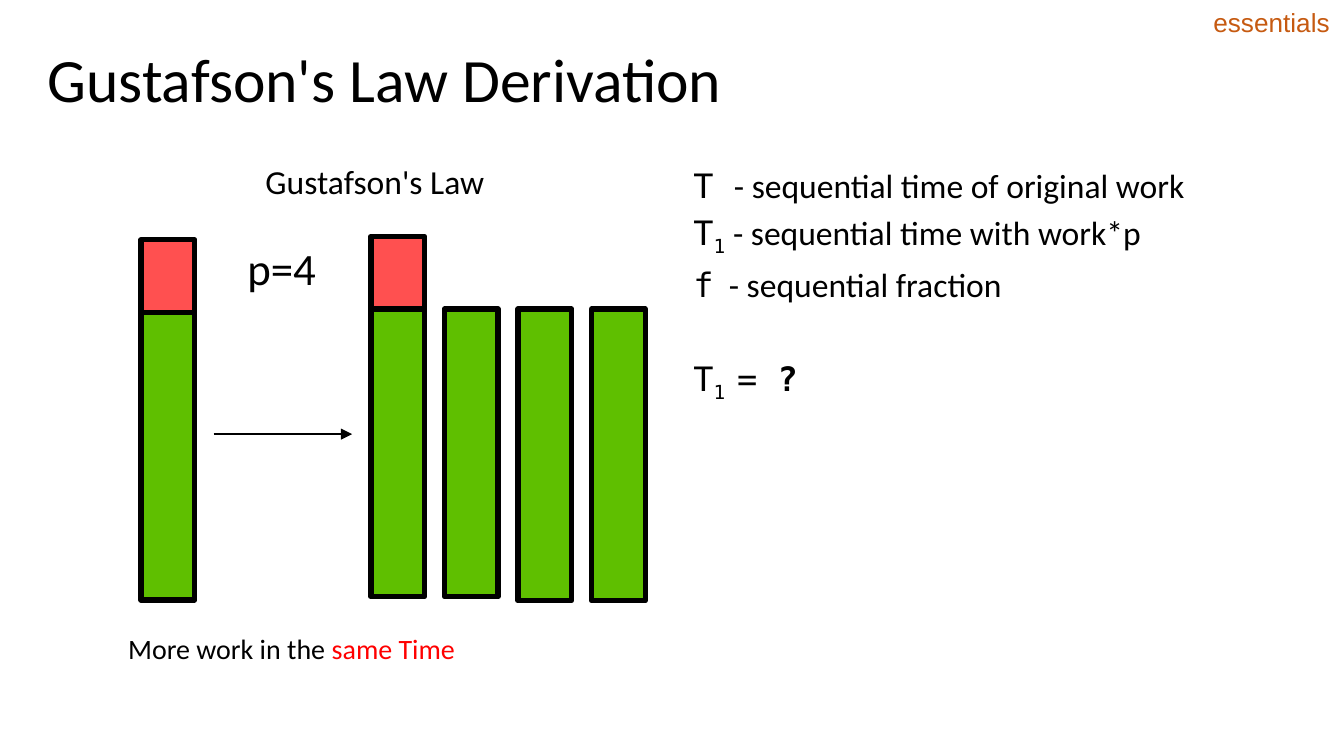
from lxml.etree import SubElement
from pptx import Presentation
from pptx.dml.color import RGBColor
from pptx.enum.shapes import MSO_CONNECTOR as Connector, MSO_SHAPE as Shape
from pptx.enum.text import MSO_ANCHOR as Anchor, PP_ALIGN as Align
from pptx.oxml.ns import qn
from pptx.util import Inches, Pt

SLIDE_WIDTH = Inches(10)
SLIDE_HEIGHT = SLIDE_WIDTH * 9 // 16
UNIT = SLIDE_WIDTH // 100
BLACK, RED, GREEN = "000000", "FF5050", "5FBF00"
BODY, MONO = "Calibri", "DejaVu Sans Mono"
BAR_WIDTH, BAR_PITCH = 4, 5.47
SERIAL_HEIGHT, PARALLEL_HEIGHT = 5.4, 21.4


def grid(*values):
    return [int(value * UNIT) for value in values]


def paint(color_format, color):
    color_format.rgb = RGBColor.from_string(color)


def add_run(paragraph, text, size, font=BODY, color=BLACK, bold=False, baseline=0):
    run = paragraph.add_run()
    run.text = text
    run.font.size = Pt(size)
    run.font.name = font
    run.font.bold = bold
    paint(run.font.color, color)
    if baseline:
        run.font._element.set("baseline", str(baseline * 1000))


def add_text_box(slide, box, inset=(0.07, 0.04), wrap=True, anchor=Anchor.TOP):
    frame = slide.shapes.add_textbox(*grid(*box)).text_frame
    frame.word_wrap = wrap
    frame.vertical_anchor = anchor
    frame.margin_left = frame.margin_right = Inches(inset[0])
    frame.margin_top = frame.margin_bottom = Inches(inset[1])
    return frame


def add_label(slide, box, text, size, align=Align.LEFT, **options):
    paragraph = add_text_box(slide, box, **options).paragraphs[0]
    paragraph.alignment = align
    add_run(paragraph, text, size)
    return paragraph


def add_block(slide, box, color):
    block = slide.shapes.add_shape(Shape.RECTANGLE, *grid(*box))
    block.shadow.inherit = False
    block.fill.solid()
    paint(block.fill.fore_color, color)
    paint(block.line.color, BLACK)
    block.line.width = Pt(2.83)


def add_serial_bar(slide, left, top):
    add_block(slide, (left, top, BAR_WIDTH, SERIAL_HEIGHT), RED)
    add_block(slide, (left, top + SERIAL_HEIGHT, BAR_WIDTH, PARALLEL_HEIGHT), GREEN)


def add_arrow(slide, start, end):
    arrow = slide.shapes.add_connector(Connector.STRAIGHT, *grid(*start, *end))
    paint(arrow.line.color, BLACK)
    arrow.line.width = Pt(1.5)
    SubElement(arrow.line._get_or_add_ln(), qn("a:tailEnd"), type="triangle")
    SubElement(arrow._element.spPr, qn("a:effectLst"))


def add_definitions(slide, box):
    mono = {"font": MONO}
    subscript = {"font": MONO, "baseline": -25}
    lines = [
        (0, [("T ", mono), ("- sequential time of original work", {})]),
        (0, [("T", mono), ("1", subscript), (" - sequential time with work*p", {})]),
        (0, [("f", mono), ("  - sequential fraction", {})]),
        (25, [("T", mono), ("1 ", subscript), ("= ", mono), ("?", {"font": MONO, "bold": True})]),
    ]
    frame = add_text_box(slide, box)
    for index, (gap, runs) in enumerate(lines):
        paragraph = frame.add_paragraph() if index else frame.paragraphs[0]
        paragraph.line_spacing = 1.15
        paragraph.space_before = Pt(gap)
        for text, style in runs:
            add_run(paragraph, text, 18, **style)


def add_bars(slide):
    add_serial_bar(slide, 10.5, 17.85)
    left, top = 27.6, 17.6
    add_serial_bar(slide, left, top)
    for column, height in enumerate((PARALLEL_HEIGHT, 21.7, 21.7), start=1):
        box = (left + column * BAR_PITCH, top + SERIAL_HEIGHT, BAR_WIDTH, height)
        add_block(slide, box, GREEN)
    add_arrow(slide, (15.9, 32.3), (26.2, 32.3))


def main():
    presentation = Presentation()
    presentation.slide_width = SLIDE_WIDTH
    presentation.slide_height = SLIDE_HEIGHT
    slide = presentation.slides.add_slide(presentation.slide_layouts[6])

    title = add_label(slide, (2.84, 0, 94.4, 12.24), "Gustafson's Law Derivation", 33,
                      inset=(0.07, 0.07), anchor=Anchor.MIDDLE)
    title.line_spacing = 0.9
    add_label(slide, (15.6, 11.6, 24.6, 3.7), "Gustafson's Law", 18, Align.CENTER)
    add_definitions(slide, (50.9, 11.4, 48.7, 44.8))
    add_bars(slide)
    caption = add_label(slide, (8.84, 46.6, 35.2, 3.3), "More work in the ", 15)
    add_run(caption, "same Time", 15, color="FF0000")
    add_label(slide, (16.4, 17.5, 9.1, 5.8), "p=4", 24, Align.CENTER)
    tag = add_text_box(slide, (89.3, 0, 10.7, 3.4), inset=(0.1, 0.05), wrap=False)
    add_run(tag.paragraphs[0], "essentials", 14, font="Arial", color="C65A11")

    presentation.save("out.pptx")


if __name__ == "__main__":
    main()
